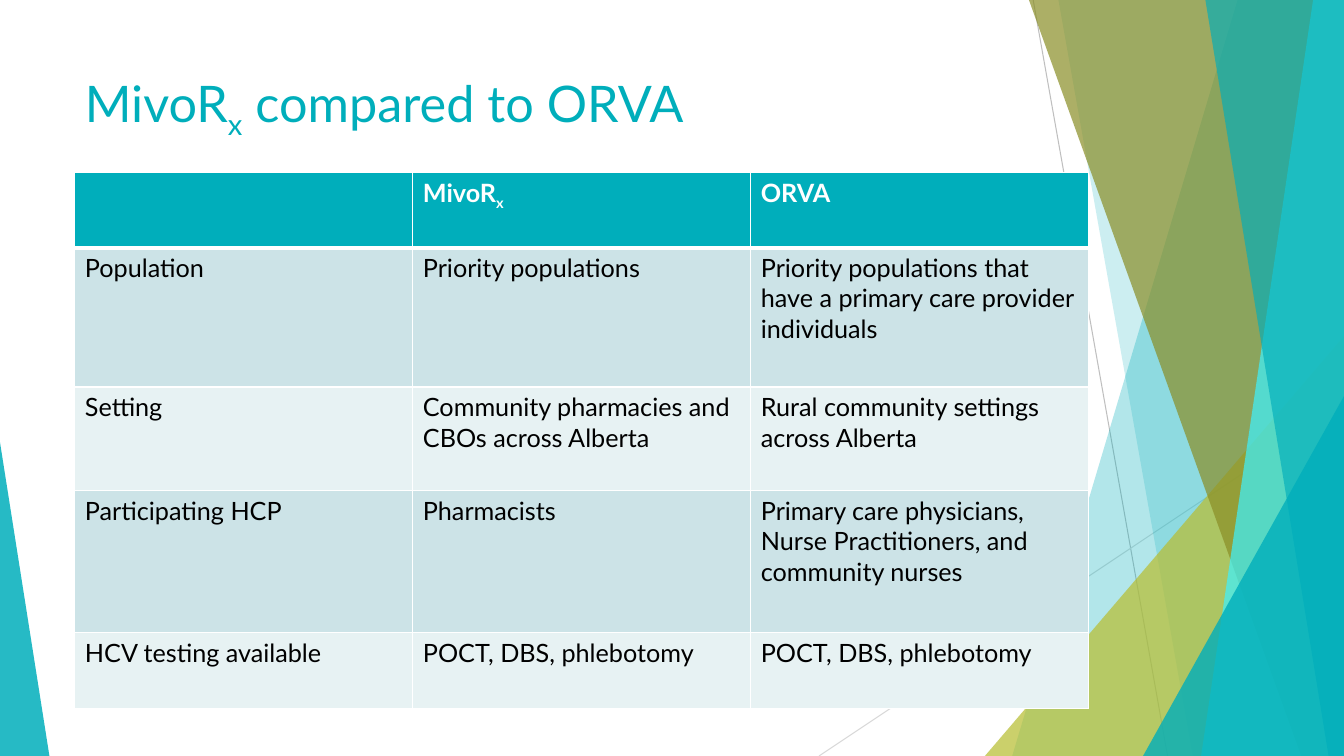
from lxml.etree import SubElement
from pptx import Presentation
from pptx.dml.color import RGBColor
from pptx.enum.shapes import MSO_CONNECTOR, MSO_SHAPE
from pptx.enum.text import MSO_ANCHOR
from pptx.oxml.ns import qn
from pptx.util import Pt

W, H = 960, 540
FONT = "Lato"
COLORS = {
    "teal": "00AEBB", "aqua": "3DF2FF", "lime": "B8BE33", "olive": "8A8E26",
    "white": "FFFFFF", "black": "000000", "band1": "CCE3E7", "band2": "E7F2F3",
    "line1": "BFBFBF", "line2": "D9D9D9",
}
PHARMACY_PROGRAM = [("MivoR", 0), ("x", -25)]
RURAL_PROGRAM = "ORVA"
TITLE = PHARMACY_PROGRAM + [(f" compared to {RURAL_PROGRAM}", 0)]
ROWS = [
    ([], PHARMACY_PROGRAM, [(RURAL_PROGRAM, 0)]),
    ("Population", "Priority populations",
     "Priority populations that have a primary care provider individuals"),
    ("Setting", "Community pharmacies and CBOs across Alberta",
     "Rural community settings across Alberta"),
    ("Participating HCP", "Pharmacists",
     "Primary care physicians, Nurse Practitioners, and community nurses"),
    ("HCV testing available", "POCT, DBS, phlebotomy", "POCT, DBS, phlebotomy"),
]
ROW_HEIGHTS = [54, 99.4, 74.2, 101.5, 54]


def rgb(name):
    return RGBColor.from_string(COLORS[name])


def paint(shape, color, alpha):
    shape.shadow.inherit = False
    shape.fill.solid()
    shape.fill.fore_color.rgb = rgb(color)
    shape.line.fill.background()
    clr = shape._element.spPr.find(qn("a:solidFill")).find(qn("a:srgbClr"))
    SubElement(clr, qn("a:alpha"), val=str(alpha * 1000))


def write(p, parts, **formats):
    for text, baseline in parts:
        r = p.add_run()
        r.text = text
        r.font.color.rgb = rgb(formats["color"])
        for name in ("size", "bold"):
            setattr(r.font, name, formats[name])
        r.font.name = FONT
        if baseline:
            r._r.get_or_add_rPr().set("baseline", str(baseline * 1000))


def add_line(s, x1, y1, x2, y2, color):
    line = s.shapes.add_connector(
        MSO_CONNECTOR.STRAIGHT, Pt(x1), Pt(y1), Pt(x2), Pt(y2))
    line.line.color.rgb = rgb(color)
    line.line.width = Pt(0.75)
    SubElement(line._element.spPr, qn("a:effectLst"))


def add_facet(s, top_x, bottom_x, color, alpha):
    builder = s.shapes.build_freeform(Pt(top_x), 0, scale=1.0)
    corners = [(W, 0), (W, H), (bottom_x, H)]
    builder.add_line_segments([(Pt(x), Pt(y)) for x, y in corners], close=True)
    paint(builder.convert_to_shape(), color, alpha)


def add_triangle(s, x, y, w, peak, color, alpha):
    sp = s.shapes.add_shape(
        MSO_SHAPE.ISOSCELES_TRIANGLE, Pt(x), Pt(y), Pt(w), Pt(H - y))
    sp.adjustments[0] = peak
    paint(sp, color, alpha)


def add_backdrop(s):
    add_line(s, 738, 0, 834, H, "line1")
    add_line(s, W, 290, 585, H, "line2")
    add_facet(s, 884, 723, "teal", 30)
    add_facet(s, 756, 852, "teal", 20)
    add_triangle(s, 703.5, 240, W - 703.5, 1, "lime", 72)
    add_facet(s, 735, 929.5, "olive", 70)
    add_facet(s, 938, 858, "aqua", 70)
    add_facet(s, 861, 949, "teal", 65)
    add_triangle(s, 816.5, 283, W - 816.5, 1, "teal", 80)
    add_triangle(s, 0, 316, 35.3, 0, "teal", 85)


def add_title(s, x, y, w, h):
    tf = s.shapes.add_textbox(Pt(x), Pt(y), Pt(w), Pt(h)).text_frame
    tf.word_wrap = True
    tf.vertical_anchor = MSO_ANCHOR.TOP
    write(tf.paragraphs[0], TITLE, size=Pt(36), bold=False, color="teal")


def set_border(cell, side, width):
    ln = SubElement(cell._tc.get_or_add_tcPr(), qn(f"a:ln{side}"), w=str(Pt(width)))
    fill = SubElement(ln, qn("a:solidFill"))
    SubElement(fill, qn("a:srgbClr"), val=COLORS["white"])


def add_comparison(s, x, y, w):
    cols = len(ROWS[0])
    table = s.shapes.add_table(
        len(ROWS), cols, Pt(x), Pt(y), Pt(w), Pt(sum(ROW_HEIGHTS))).table
    for col in table.columns:
        col.width = Pt(w / cols)
    for i, (texts, height) in enumerate(zip(ROWS, ROW_HEIGHTS)):
        table.rows[i].height = Pt(height)
        header = i == 0
        band = "teal" if header else ("band2", "band1")[i % 2]
        for j, text in enumerate(texts):
            cell = table.cell(i, j)
            for side in "LRTB":
                thick = (i, side) in ((0, "B"), (1, "T"))
                set_border(cell, side, 3 if thick else 1)
            cell.fill.solid()
            cell.fill.fore_color.rgb = rgb(band)
            parts = text if header else [(text, 0)]
            write(cell.text_frame.paragraphs[0], parts, size=Pt(18),
                  bold=header, color="white" if header else "black")


def main():
    prs = Presentation()
    prs.slide_width, prs.slide_height = Pt(W), Pt(H)
    s = prs.slides.add_slide(prs.slide_layouts[6])
    add_backdrop(s)
    add_title(s, 53.5, 48, 677, 104)
    add_comparison(s, 53.5, 123, 724.2)
    prs.save("out.pptx")


if __name__ == "__main__":
    main()
